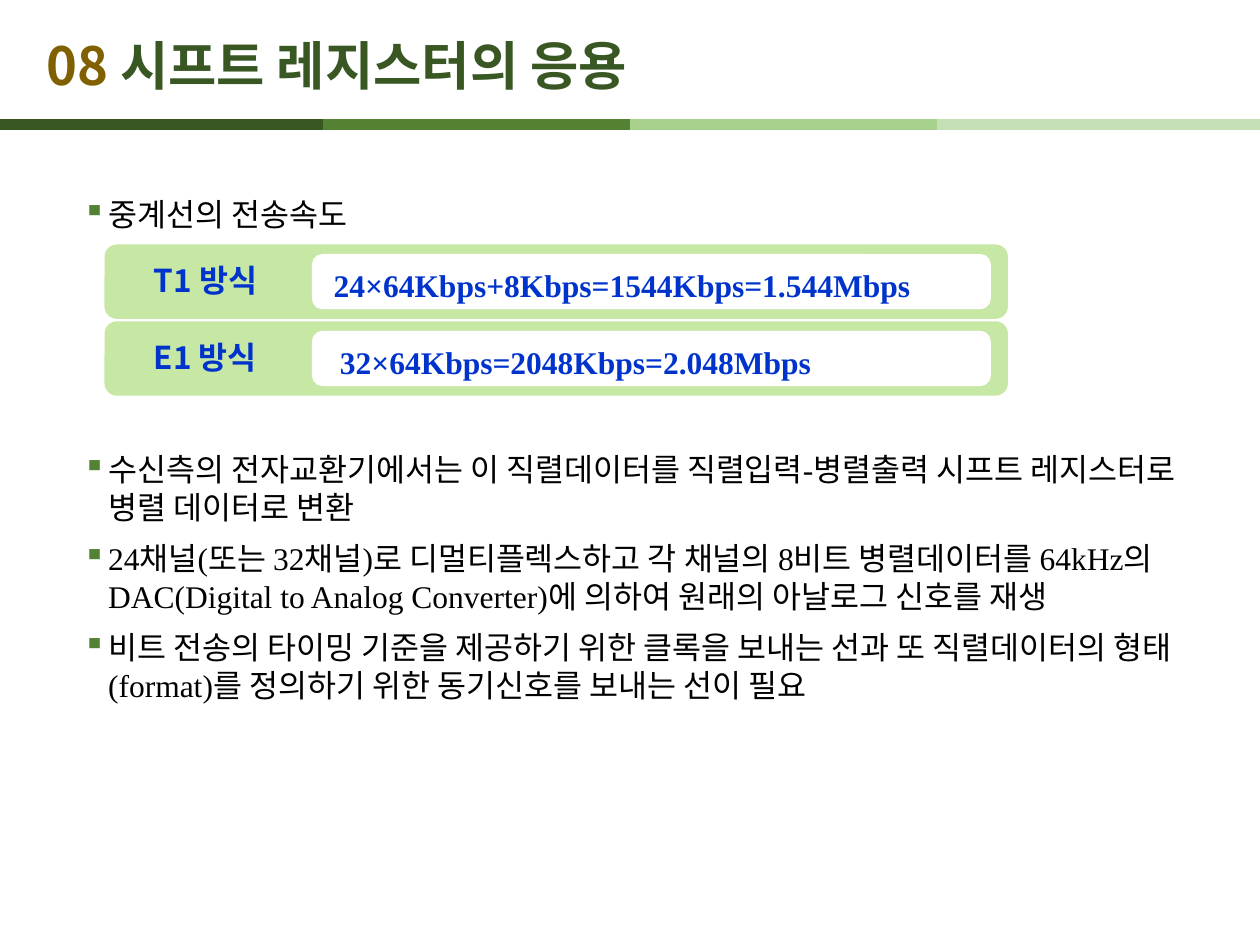
from dataclasses import dataclass

from lxml import etree
from pptx import Presentation
from pptx.dml.color import RGBColor
from pptx.enum.shapes import MSO_CONNECTOR, MSO_SHAPE
from pptx.enum.text import MSO_ANCHOR, PP_ALIGN
from pptx.oxml.ns import qn
from pptx.slide import Slide
from pptx.text.text import TextFrame
from pptx.util import Inches, Pt

STRAIGHT = MSO_CONNECTOR.STRAIGHT
ROUNDED = MSO_SHAPE.ROUNDED_RECTANGLE
TOP, MIDDLE = MSO_ANCHOR.TOP, MSO_ANCHOR.MIDDLE
LEFT, CENTER = PP_ALIGN.LEFT, PP_ALIGN.CENTER


@dataclass(frozen=True)
class Theme:
    sans: str = "Noto Sans CJK KR"
    serif: str = "Times New Roman"
    title_size: float = 30
    body_size: float = 18
    line_pitch: float = 21.7
    number: str = "806000"
    title: str = "385723"
    text: str = "000000"
    accent: str = "0033CC"
    bullet: str = "548235"
    panel: str = "92D050"
    white: str = "FFFFFF"
    bars: tuple[str, ...] = ("385723", "548235", "A9D18E", "C5E0B4")


@dataclass(frozen=True)
class Span:
    text: str
    color: str
    font: str
    size: float
    bold: bool = False


@dataclass(frozen=True)
class Rate:
    label: str
    formula: str
    top: float
    formula_left: float


@dataclass(frozen=True)
class BulletGroup:
    top: float
    height: float
    items: tuple[str, ...]


THEME = Theme()
BAR_STARTS = (0, 2.56, 5, 7.44)
BAR_WIDTH = 2.56
RATES = (
    Rate("T1 방식", "24×64Kbps+8Kbps=1544Kbps=1.544Mbps", 1.94, 2.55),
    Rate("E1 방식", "32×64Kbps=2048Kbps=2.048Mbps", 2.55, 2.6),
)
GROUPS = (
    BulletGroup(1.5, 0.4, ("중계선의 전송속도",)),
    BulletGroup(3.52, 2.2, (
        "수신측의 전자교환기에서는 이 직렬데이터를 직렬입력-병렬출력 시프트 레지스터로 병렬 데이터로 변환",
        "24채널(또는 32채널)로 디멀티플렉스하고 각 채널의 8비트 병렬데이터를 64kHz의 "
        "DAC(Digital to Analog Converter)에 의하여 원래의 아날로그 신호를 재생",
        "비트 전송의 타이밍 기준을 제공하기 위한 클록을 보내는 선과 또 직렬데이터의 "
        "형태(format)를 정의하기 위한 동기신호를 보내는 선이 필요",
    )),
)


def rgb(color: str) -> RGBColor:
    return RGBColor.from_string(color)


def add_frame(page: Slide, left: float, top: float, width: float, height: float,
              anchor=TOP) -> TextFrame:
    box = page.shapes.add_textbox(Inches(left), Inches(top), Inches(width), Inches(height))
    frame = box.text_frame
    frame.word_wrap = True
    frame.vertical_anchor = anchor
    return frame


def write_spans(para, spans: tuple[Span, ...], align=LEFT) -> None:
    para.alignment = align
    for span in spans:
        run = para.add_run()
        run.text = span.text
        font = run.font
        font.name = span.font
        font.size = Pt(span.size)
        font.bold = span.bold
        font.color.rgb = rgb(span.color)
        east_asian = etree.SubElement(run._r.get_or_add_rPr(), qn("a:ea"))
        east_asian.set("typeface", THEME.sans)


def add_bar(page: Slide, start: float, color: str) -> None:
    y = Inches(0.99)
    bar = page.shapes.add_connector(STRAIGHT, Inches(start), y, Inches(start + BAR_WIDTH), y)
    bar.line.color.rgb = rgb(color)
    bar.line.width = Pt(6)
    etree.SubElement(bar._element.spPr, qn("a:effectLst"))


def add_panel(page: Slide, left: float, top: float, width: float, height: float, color: str):
    panel = page.shapes.add_shape(ROUNDED, Inches(left), Inches(top), Inches(width), Inches(height))
    panel.shadow.inherit = False
    panel.fill.solid()
    panel.fill.fore_color.rgb = rgb(color)
    panel.line.fill.background()
    return panel


def add_rate(page: Slide, rate: Rate) -> None:
    outer = add_panel(page, 0.83, rate.top, 7.17, 0.59, THEME.panel)
    tint = outer._element.spPr.find(qn("a:solidFill"))[0]
    etree.SubElement(tint, qn("a:alpha")).set("val", "51000")

    inner = add_panel(page, 2.49, rate.top + 0.09, 5.36, 0.41, THEME.white)
    inner.line.color.rgb = rgb(THEME.white)
    inner.line.width = Pt(2)

    label = add_frame(page, 0.85, rate.top + 0.08, 1.56, 0.4)
    write_spans(label.paragraphs[0],
                (Span(rate.label, THEME.accent, THEME.sans, THEME.body_size, True),), CENTER)
    formula = add_frame(page, rate.formula_left, rate.top + 0.12, 5.1, 0.4)
    write_spans(formula.paragraphs[0],
                (Span(rate.formula, THEME.accent, THEME.serif, THEME.body_size, True),))


def set_bullet(para) -> None:
    properties = para._p.get_or_add_pPr()
    properties.set("marL", str(Inches(0.49)))
    properties.set("indent", str(Inches(-0.2)))
    color = etree.SubElement(properties, qn("a:buClr"))
    etree.SubElement(color, qn("a:srgbClr")).set("val", THEME.bullet)
    etree.SubElement(properties, qn("a:buChar")).set("char", "▪")


def add_bullets(page: Slide, group: BulletGroup) -> None:
    frame = add_frame(page, 0.27, group.top, 9.45, group.height)
    for index, item in enumerate(group.items):
        para = frame.add_paragraph() if index else frame.paragraphs[0]
        set_bullet(para)
        para.line_spacing = Pt(THEME.line_pitch)
        para.space_before = Pt(3.6 if index else 0)
        para.space_after = Pt(4)
        write_spans(para, (Span(item, THEME.text, THEME.serif, THEME.body_size),))


def main() -> None:
    deck = Presentation()
    deck.slide_width, deck.slide_height = Inches(10), Inches(7.5)
    page = deck.slides.add_slide(deck.slide_layouts[6])

    for start, color in zip(BAR_STARTS, THEME.bars):
        add_bar(page, start, color)

    title = add_frame(page, 0.27, 0.21, 8.27, 0.6, MIDDLE)
    write_spans(title.paragraphs[0], (
        Span("08 ", THEME.number, THEME.sans, THEME.title_size, True),
        Span("시프트 레지스터의 응용", THEME.title, THEME.sans, THEME.title_size, True),
    ))

    for group in GROUPS:
        add_bullets(page, group)
    for rate in RATES:
        add_rate(page, rate)

    deck.save("out.pptx")


if __name__ == "__main__":
    main()
